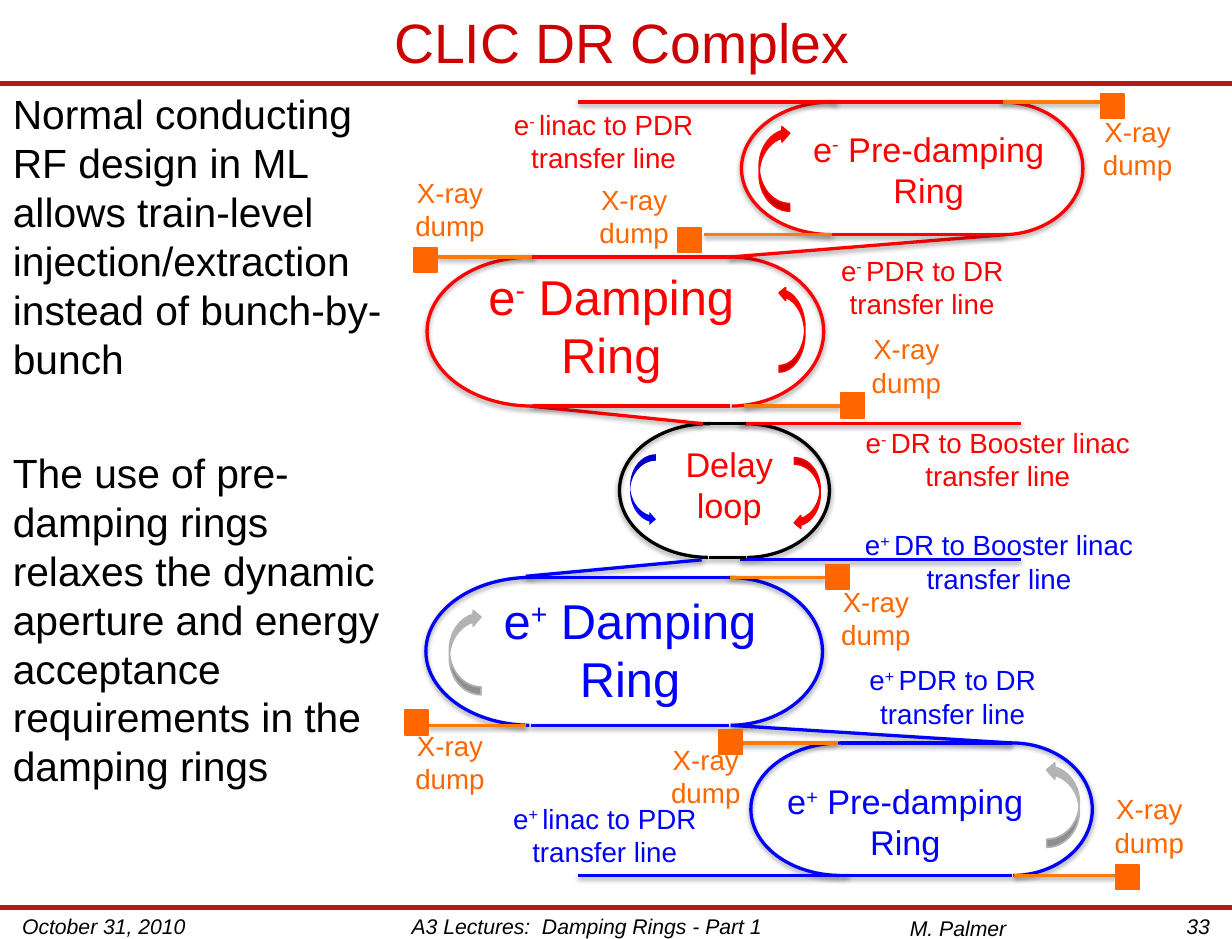
from lxml import etree
from pptx import Presentation
from pptx.dml.color import RGBColor
from pptx.enum.shapes import MSO_CONNECTOR, MSO_SHAPE
from pptx.enum.text import MSO_ANCHOR, MSO_AUTO_SIZE, PP_ALIGN
from pptx.oxml.ns import qn
from pptx.util import Inches, Pt

RED, BLUE, BLACK, GREY = "FF0000", "0000FF", "000000", "B3B3B3"
ORANGE, PHOTON, RULE = "FF6600", "FF7B06", "B31B1B"
LEFT, CENTER, RIGHT = PP_ALIGN.LEFT, PP_ALIGN.CENTER, PP_ALIGN.RIGHT
LEFT_HALF, RIGHT_HALF = (54.68, 162.32), (161.68, 53.32)
paint = RGBColor.from_string

prs = Presentation()
prs.slide_width, prs.slide_height = Inches(10.5), Inches(8)
slide = prs.slides.add_slide(prs.slide_layouts[1])
shapes = slide.shapes
CELL = prs.slide_width / 105  # 105 columns by 80 rows of square cells


def grid(*cells):
    return [round(cell * CELL) for cell in cells]


def stroke(outline, color, width=2, shadow=True):
    outline.line.color.rgb = paint(color)
    outline.line.width = Pt(width)
    effects = etree.SubElement(outline._element.spPr, qn("a:effectLst"))
    if shadow:
        cast = etree.SubElement(effects, qn("a:outerShdw"), blurRad=str(Pt(3.1)),
                                dist=str(Pt(1.6)), dir="5400000", rotWithShape="0")
        tint = etree.SubElement(cast, qn("a:srgbClr"), val=BLACK)
        etree.SubElement(tint, qn("a:alpha"), val="38000")


# Rules under the title and above the footer
for row in (7.1, 77.3):
    rule = shapes.add_connector(MSO_CONNECTOR.STRAIGHT, *grid(0, row, 105, row))
    stroke(rule, RULE, 3, shadow=False)

# Title and body
title, body = slide.placeholders
title.left, title.top, title.width, title.height = grid(5.3, 0, 95.4, 7.1)
title.text_frame.text = "CLIC DR Complex"
title.text_frame.vertical_anchor = MSO_ANCHOR.MIDDLE
body.left, body.top, body.width, body.height = grid(0, 7.1, 34.1, 70.2)
body.text_frame.text = (
    "Normal conducting RF design in ML allows train-level "
    "injection/extraction instead of bunch-by-bunch\n"
    "The use of pre-damping rings relaxes the dynamic aperture and energy "
    "acceptance requirements in the damping rings")
for holder, size, color, align in ((title, 34, "CC0000", CENTER), (body, 25, BLACK, LEFT)):
    frame = holder.text_frame
    frame.auto_size = MSO_AUTO_SIZE.NONE
    frame.margin_left = frame.margin_right = Inches(0.11)
    for index, para in enumerate(frame.paragraphs):
        props = para._p.get_or_add_pPr()
        props.set("marL", "0")
        props.set("indent", "0")
        etree.SubElement(props, qn("a:buNone"))
        para.alignment = align
        para.space_before = Pt(40 * index)
        para.font.size, para.font.name = Pt(size), "Arial"
        para.font.color.rgb = paint(color)

# Rings: left arc (left, width), right arc (left, width), top, height
rings = [
    (63.2, 15.4, 78.6, 13.7, 8.7, 11.3, RED),
    (36.4, 17.9, 54.3, 15.9, 21.9, 12.7, RED),
    (36.3, 17.9, 54.2, 15.9, 49.2, 12.6, BLUE),
    (64, 15.4, 79.4, 13.7, 63.3, 11.3, BLUE),
    (52.8, 15.3, 56.4, 14.3, 36.1, 11.4, BLACK),
]
# Transfer lines, then photon lines to the dumps
beams = [
    (49.3, 8.7, 71.4, 8.7, RED), (62.2, 21.9, 85.6, 20, RED),
    (63, 36.1, 87, 36.1, RED), (59.9, 36.1, 45.2, 34.6, RED),
    (49.3, 74.6, 72.3, 74.6, BLUE), (62.3, 61.8, 86.2, 63.3, BLUE),
    (44.8, 49.1, 59.8, 47.7, BLUE), (63.1, 47.7, 87, 47.7, BLUE),
]
photons = [
    (60, 71.1, 20), (62.2, 70.4, 49.2), (86.4, 95.2, 74.6), (37.3, 45.5, 21.9),
    (63.1, 71.4, 63.3), (36.5, 44.8, 61.8), (63.4, 71.7, 34.6), (85.4, 93.8, 8.7),
]
for left, left_width, right, right_width, top, height, color in rings:
    for start, width, angles in ((left, left_width, LEFT_HALF), (right, right_width, RIGHT_HALF)):
        arc = shapes.add_shape(MSO_SHAPE.ARC, *grid(start, top, width, height))
        arc.adjustments[0], arc.adjustments[1] = angles
        arc.fill.background()
        stroke(arc, color)
    for row in (top, top + height):
        beams.append((left + left_width / 2, row, right + right_width / 2, row, color))
beams[8:8] = [(start, row, end, row, PHOTON) for start, end, row in photons]
for *ends, color in beams:
    stroke(shapes.add_connector(MSO_CONNECTOR.STRAIGHT, *grid(*ends)), color)

# Arrows for the direction of travel
arrows = [
    (38.3, 51.9, 2.7, 7.3, GREY, "V"), (64.7, 10.7, 2.6, 7.3, RED, "V"),
    (66.4, 24.4, 2.2, 7.3, RED, "HV"), (89.2, 64.9, 2.8, 7.3, GREY, "HV"),
    (67.7, 39, 2.2, 6.1, RED, "H"), (53.7, 38.7, 2.2, 6.1, BLUE, ""),
]
for *box, color, flips in arrows:
    arrow = shapes.add_shape(MSO_SHAPE.CURVED_RIGHT_ARROW, *grid(*box))
    for axis in flips:
        arrow._element.spPr.find(qn("a:xfrm")).set("flip" + axis, "1")
    arrow.fill.solid()
    arrow.fill.fore_color.rgb = paint(color)
    stroke(arrow, color, 1, shadow=False)
    if not flips:
        arrow.line.fill.background()

# Labels: a bar on each side marks the superscript charge
labels = [
    (38.5, 49.8, 30.4, 11.1, "e|+| Damping Ring", 30, BLUE),
    (37, 22.2, 30.2, 11.1, "e|-| Damping Ring", 30, RED),
    (64.4, 66, 25.5, 8.1, "e|+| Pre-damping Ring", 21, BLUE),
    (66.6, 10.4, 25.1, 8.1, "e|-| Pre-damping Ring", 21, RED),
    (54.7, 37.3, 14.9, 8.3, "Delay loop", 21, RED),
    (38.9, 67.8, 25.3, 6.8, "e|+ |linac to PDR transfer line", 17, BLUE),
    (39, 8.7, 24.9, 6.8, "e|- |linac to PDR transfer line", 17, RED),
    (69.1, 56, 24.2, 6.8, "e|+ |PDR to DR transfer line", 17, BLUE),
    (66.5, 21.1, 24.2, 6.8, "e|- |PDR to DR transfer line", 17, RED),
    (69.6, 44.5, 31.1, 6.8, "e|+ |DR to Booster linac transfer line", 17, BLUE),
    (69.7, 35.8, 30.7, 6.8, "e|- |DR to Booster linac transfer line", 17, RED),
]
dump_labels = [(48.1, 15.1), (71.3, 27.8), (68.7, 49.3), (32.4, 14.5),
               (54.2, 62.8), (32.4, 61.6), (91, 9.3), (92, 67)]
labels += [(left, top, 11.9, 6.8, "X-ray dump", 17, ORANGE) for left, top in dump_labels]
footers = [
    (0.9, 77.3, 34.1, 2.7, "October 31, 2010", 13, BLACK, LEFT),
    (34.1, 77.3, 35, 2.1, "A3 Lectures:  Damping Rings - Part 1", 13, BLACK, LEFT),
    (75.8, 77.5, 11.7, 3.2, "M. Palmer", 13, BLACK, CENTER),
    (96.2, 77.3, 7.9, 1.8, "33", 13, BLACK, RIGHT),
]
for *box, text, size, color, align in [(*label, CENTER) for label in labels] + footers:
    frame = shapes.add_textbox(*grid(*box)).text_frame
    frame.word_wrap = True
    para = frame.paragraphs[0]
    para.alignment = align
    for index, part in enumerate(text.split("|")):
        run = para.add_run()
        run.text = part
        run.font.size, run.font.name = Pt(size), "Arial"
        run.font.color.rgb = paint(color)
        run.font.italic = size == 13
        if index == 1:
            run._r.get_or_add_rPr().set("baseline", "30000")

# X-ray dumps
dumps = [(57.8, 19.4), (35.3, 21.1), (93.8, 8), (71.7, 33.5),
         (70.4, 48.1), (34.5, 60.5), (61.3, 62.2), (95.1, 73.7)]
for left, top in dumps:
    dump = shapes.add_shape(MSO_SHAPE.RECTANGLE, *grid(left, top, 2, 2.1))
    dump.fill.solid()
    dump.fill.fore_color.rgb = paint(ORANGE)
    stroke(dump, ORANGE, 1, shadow=False)

prs.save("out.pptx")
